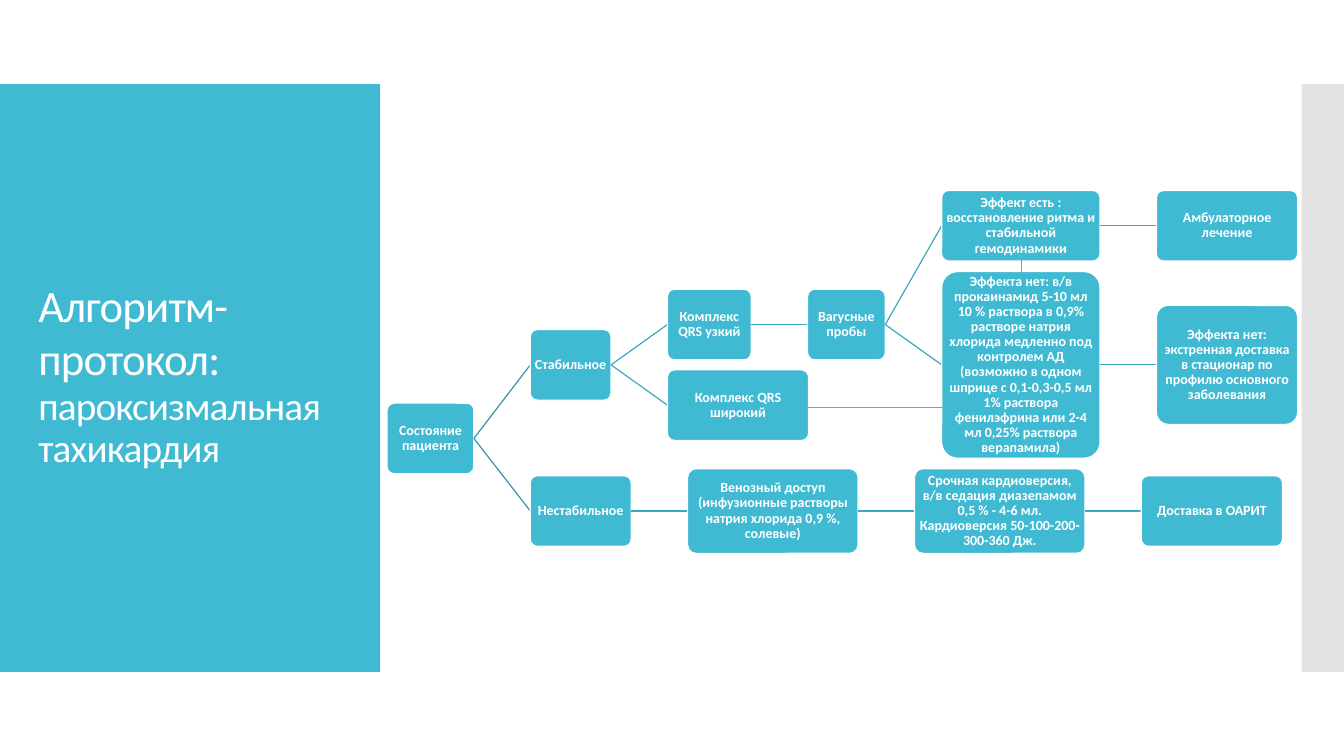
import pptx
import pptx.dml.color
import pptx.enum.shapes
import pptx.enum.text
import pptx.oxml
import pptx.oxml.ns
import pptx.util
from lxml import etree

# Content
TITLE = [("Алгоритм-протокол:", "title"), (" ", "gap"),
         ("пароксизмальная тахикардия", "subtitle")]

# Row centres in inches, from top to bottom
ROWS = {"effect": 2.24, "narrow": 3.22, "stable": 3.62,
        "wide": 4.02, "root": 4.35, "unstable": 5.07}

# name: (parent, row, width, height, text); a child stands one gap right of its parent
STEPS = {
    "state": (None, "root", 0.86, 0.7, "Состояние пациента"),
    "stable": ("state", "stable", 0.8, 0.7, "Стабильное"),
    "narrow": ("stable", "narrow", 0.83, 0.7, "Комплекс QRS узкий"),
    "vagal": ("narrow", "narrow", 0.77, 0.7, "Вагусные пробы"),
    "effect": ("vagal", "effect", 1.57, 0.7,
               "Эффект есть : восстановление ритма и стабильной гемодинамики"),
    "outpatient": ("effect", "effect", 1.4, 0.7, "Амбулаторное лечение"),
    "no effect": ("vagal", "stable", 1.57, 1.85,
                  "Эффекта нет: в/в прокаинамид 5-10 мл 10 % раствора в 0,9% растворе "
                  "натрия хлорида медленно под контролем АД (возможно в одном шприце "
                  "с 0,1-0,3-0,5 мл 1% раствора фенилэфрина или 2-4 мл 0,25% раствора "
                  "верапамила)"),
    "hospital": ("no effect", "stable", 1.4, 1.18,
                 "Эффекта нет: экстренная доставка в стационар по профилю основного "
                 "заболевания"),
    "wide": ("stable", "wide", 1.4, 0.7, "Комплекс QRS широкий"),
    "unstable": ("state", "unstable", 1.0, 0.7, "Нестабильное"),
    "access": ("unstable", "unstable", 1.69, 0.84,
               "Венозный доступ (инфузионные растворы натрия хлорида 0,9 %, солевые)"),
    "cardioversion": ("access", "unstable", 1.69, 0.84,
                      "Срочная кардиоверсия, в/в седация диазепамом 0,5 % - 4-6 мл. "
                      "Кардиоверсия 50-100-200-300-360 Дж."),
    "intensive care": ("cardioversion", "unstable", 1.4, 0.7, "Доставка в ОАРИТ"),
}
EXTRA_LINKS = [((10.13, 2.53), (10.13, 2.76)), ((7.87, 4.04), (9.4, 4.04))]

# Layout in inches
WIDTH, HEIGHT = 13.33, 7.5
BAND_TOP, BAND_HEIGHT = HEIGHT / 9, HEIGHT * 7 / 9
PANEL_WIDTH, STRIP_WIDTH = 3.77, 0.42
TREE_LEFT, GAP = 3.84, 0.56


class Theme:
    font = "Calibri"
    accent, white, grey = "40BAD2", "FFFFFF", "C8C8C8"
    first_link, link = "3395A8", "3AA9BF"
    sizes = {"title": 32, "gap": 36, "subtitle": 28, "step": 10}
    outline, extra_line = 0.85, 0.75


def inches(*lengths):
    return [pptx.util.Inches(length) for length in lengths]


def rgb(code):
    return pptx.dml.color.RGBColor.from_string(code)


def style_span(span, role, bold=False):
    span.font.name = Theme.font
    span.font.size = pptx.util.Pt(Theme.sizes[role])
    span.font.bold = bold
    span.font.color.rgb = rgb(Theme.white)


def add_block(page, kind, place, colour):
    block = page.shapes.add_shape(kind, *inches(*place))
    block.shadow.inherit = False
    block.fill.solid()
    block.fill.fore_color.rgb = rgb(colour)
    block.line.fill.background()
    return block


def add_link(page, start, end, colour, weight):
    link = page.shapes.add_connector(
        pptx.enum.shapes.MSO_CONNECTOR.STRAIGHT, *inches(*start, *end))
    link.line.color.rgb = rgb(colour)
    link.line.width = pptx.util.Pt(weight)
    etree.SubElement(link.element.spPr, pptx.oxml.ns.qn("a:effectLst"))


def add_panels(page):
    rectangle = pptx.enum.shapes.MSO_SHAPE.RECTANGLE
    add_block(page, rectangle, (0, BAND_TOP, PANEL_WIDTH, BAND_HEIGHT), Theme.accent)
    strip = add_block(page, rectangle,
                      (WIDTH - STRIP_WIDTH, BAND_TOP, STRIP_WIDTH, BAND_HEIGHT), Theme.grey)
    colour = strip.element.spPr.find(".//" + pptx.oxml.ns.qn("a:srgbClr"))
    etree.SubElement(colour, pptx.oxml.ns.qn("a:alpha"), val="50000")


def fill_title(page):
    title = page.shapes.title
    title.left, title.top, title.width, title.height = inches(0.28, 1.23, 3.47, 5.03)
    frame = title.text_frame
    frame.auto_size = pptx.enum.text.MSO_AUTO_SIZE.NONE
    frame.word_wrap = True
    frame.vertical_anchor = pptx.enum.text.MSO_ANCHOR.MIDDLE
    para = frame.paragraphs[0]
    para.alignment = pptx.enum.text.PP_ALIGN.LEFT
    para.line_spacing = 0.9
    for text, role in TITLE:
        span = para.add_run()
        span.text = text
        style_span(span, role)
        span.font._element.set("spc", "-60")
    # Bring the title in front of the panel
    title.element.getparent().append(title.element)


def add_step(page, place, text):
    box = add_block(page, pptx.enum.shapes.MSO_SHAPE.ROUNDED_RECTANGLE, place, Theme.accent)
    box.adjustments[0] = 0.1
    box.line.color.rgb = rgb(Theme.white)
    box.line.width = pptx.util.Pt(Theme.outline)
    frame = box.text_frame
    frame.word_wrap = True
    frame.vertical_anchor = pptx.enum.text.MSO_ANCHOR.MIDDLE
    frame.margin_left = frame.margin_right = pptx.util.Inches(0.01)
    frame.margin_top = frame.margin_bottom = pptx.util.Inches(0.01)
    frame.text = text
    para = frame.paragraphs[0]
    para.alignment = pptx.enum.text.PP_ALIGN.CENTER
    para.line_spacing = 0.9
    style_span(para.runs[0], "step", bold=True)


def add_tree(page):
    exits = {}
    for name, (parent, row, width, height, text) in STEPS.items():
        middle = ROWS[row]
        left = TREE_LEFT
        if parent:
            left = exits[parent][0] + GAP
            colour = Theme.first_link if parent == "state" else Theme.link
            add_link(page, exits[parent], (left, middle), colour, Theme.outline)
        add_step(page, (left, middle - height / 2, width, height), text)
        exits[name] = (left + width, middle)
    for start, end in EXTRA_LINKS:
        add_link(page, start, end, Theme.accent, Theme.extra_line)


def main():
    deck = pptx.Presentation()
    deck.slide_width, deck.slide_height = inches(WIDTH, HEIGHT)
    page = deck.slides.add_slide(deck.slide_layouts.get_by_name("Title Only"))
    add_panels(page)
    fill_title(page)
    add_tree(page)
    deck.save("out.pptx")


if __name__ == "__main__":
    main()
